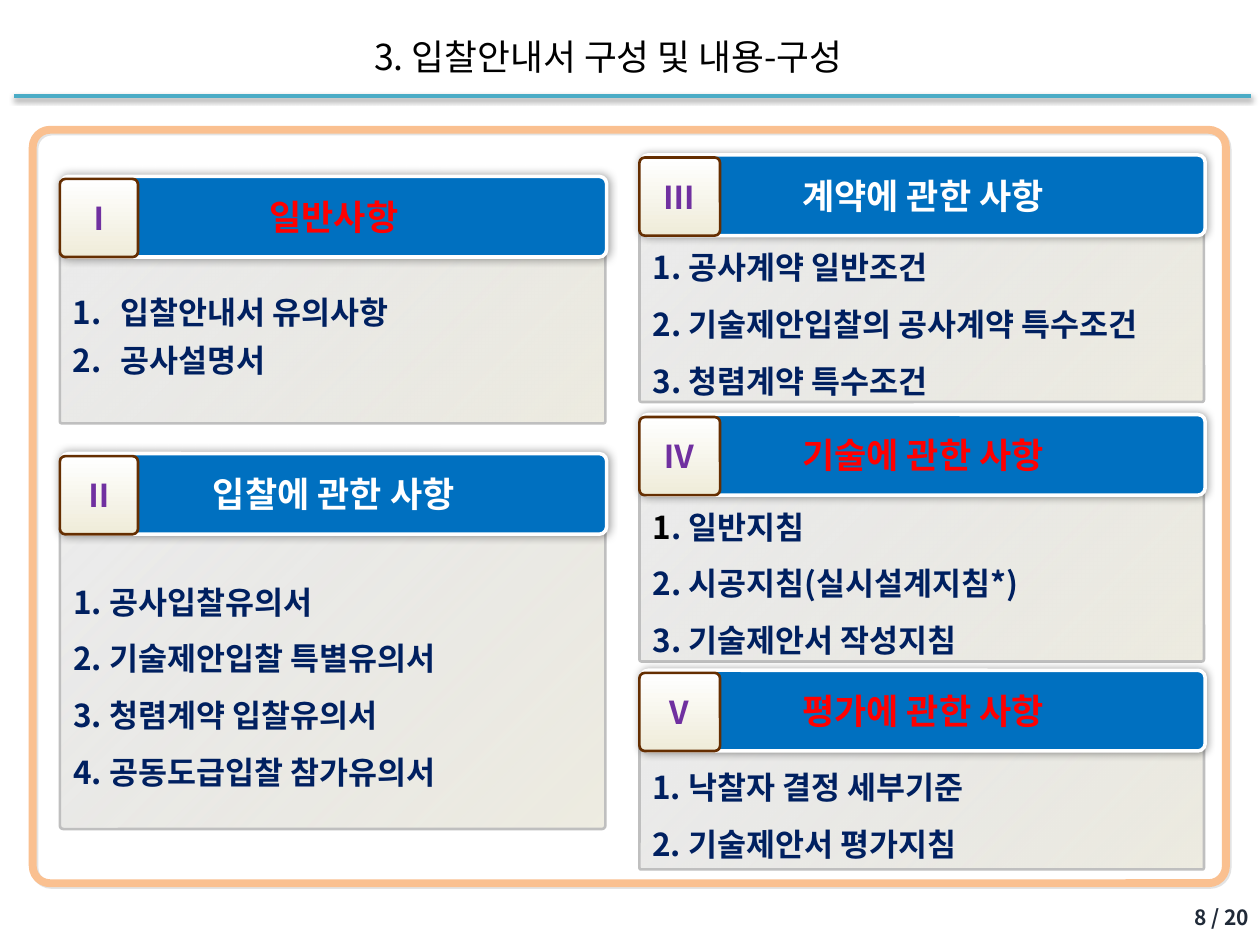
from dataclasses import dataclass

from lxml.etree import SubElement
from pptx import Presentation
from pptx.dml.color import RGBColor
from pptx.enum.shapes import MSO_CONNECTOR as Connector, MSO_SHAPE as Shape
from pptx.enum.text import MSO_ANCHOR as Anchor, PP_ALIGN as Align
from pptx.oxml import parse_xml
from pptx.oxml.ns import nsdecls, qn
from pptx.util import Inches, Pt

COLUMNS, ROWS = 100, 75
DECK_WIDTH, DECK_HEIGHT = Inches(10), Inches(7.5)
KOREAN = "Noto Sans CJK KR"
NAVY, RED, WHITE, BLACK = "002060", "FF0000", "FFFFFF", "000000"
HEADER_ROWS, BADGE_ROWS, BADGE_DROP, BODY_DROP = 6.4, 6.2, 0.2, 5.7
BODY_STOPS = (("EEECE1", 0, 100), ("D9D9D9", 100, 50), ("F2F2F2", 100, 100))
BODY_PATH = '<a:path path="circle"><a:fillToRect l="100000" t="100000"/></a:path>'
BADGE_STOPS = ((WHITE, 0, 100), ("EFECD9", 100, 100))
BADGE_PATH = '<a:lin ang="5400000" scaled="0"/>'


@dataclass(frozen=True)
class Area:
    """A rectangle in grid columns and rows."""
    left: float
    top: float
    width: float
    height: float

    def lengths(self) -> tuple:
        """Return left, top, width and height as slide lengths."""
        return across(self.left), down(self.top), across(self.width), down(self.height)


@dataclass(frozen=True)
class Stack:
    """A column of panels."""
    left: float
    width: float
    badge_width: float


@dataclass(frozen=True)
class Panel:
    """A numbered heading over a list."""
    stack: Stack
    top: float
    body_rows: float
    numeral: str
    heading: str
    heading_color: str
    items: tuple
    first_digit_color: str = NAVY
    automatic_numbers: bool = False


LEFT = Stack(4.75, 43.3, 6.2)
RIGHT = Stack(50.75, 44.8, 6.4)
PANELS = (
    Panel(LEFT, 14, 13.9, "Ⅰ", "일반사항", RED,
          ("입찰안내서 유의사항", "공사설명서"), automatic_numbers=True),
    Panel(LEFT, 36, 24.1, "Ⅱ", "입찰에 관한 사항", WHITE,
          ("1. 공사입찰유의서", "2. 기술제안입찰 특별유의서",
           "3. 청렴계약 입찰유의서", "4. 공동도급입찰 참가유의서")),
    Panel(RIGHT, 12.3, 13.9, "Ⅲ", "계약에 관한 사항", WHITE,
          ("1. 공사계약 일반조건", "2. 기술제안입찰의 공사계약 특수조건",
           "3. 청렴계약 특수조건")),
    Panel(RIGHT, 32.9, 13.9, "Ⅳ", "기술에 관한 사항", RED,
          ("1. 일반지침", "2. 시공지침(실시설계지침*)", "3. 기술제안서 작성지침"),
          first_digit_color=BLACK),
    Panel(RIGHT, 53.2, 10.1, "Ⅴ", "평가에 관한 사항", RED,
          ("1. 낙찰자 결정 세부기준", "2. 기술제안서 평가지침")),
)


def across(columns: float) -> int:
    """Convert grid columns to a length."""
    return round(DECK_WIDTH * columns / COLUMNS)


def down(rows: float) -> int:
    """Convert grid rows to a length."""
    return round(DECK_HEIGHT * rows / ROWS)


def paint(target, color: str) -> None:
    """Give a fill or a line one solid colour."""
    target.solid()
    target.fore_color.rgb = RGBColor.from_string(color)


def shade(shape, stops: tuple, direction: str) -> None:
    """Fill a shape with a gradient."""
    marks = "".join(
        f'<a:gs pos="{place * 1000}"><a:srgbClr val="{color}">'
        f'<a:alpha val="{alpha * 1000}"/></a:srgbClr></a:gs>'
        for color, place, alpha in stops)
    shape.fill.background()
    blank = shape._element.spPr.find(qn("a:noFill"))
    blank.getparent().replace(blank, parse_xml(
        f'<a:gradFill {nsdecls("a")} rotWithShape="1">'
        f'<a:gsLst>{marks}</a:gsLst>{direction}</a:gradFill>'))


def cast_shadow(shape, color: str, alpha: int, blur: float, distance: float, angle: int) -> None:
    """Add an outer shadow to a shape or connector."""
    effects = SubElement(shape._element.spPr, qn("a:effectLst"))
    shadow = SubElement(effects, qn("a:outerShdw"), blurRad=str(Pt(blur)),
                        dist=str(Pt(distance)), dir=str(angle * 60000),
                        algn="ctr", rotWithShape="0")
    tint = SubElement(shadow, qn("a:srgbClr"), val=color)
    SubElement(tint, qn("a:alpha"), val=str(alpha * 1000))


def number(para) -> None:
    """Number a paragraph automatically with a hanging indent."""
    settings = para._p.get_or_add_pPr()
    settings.set("marL", str(Inches(0.38)))
    settings.set("indent", str(-Inches(0.38)))
    SubElement(settings, qn("a:buFont"), typeface=KOREAN)
    SubElement(settings, qn("a:buAutoNum"), type="arabicPeriod")


def write(para, text: str, *, size: float, color: str, bold: bool = True,
          font: str = KOREAN) -> None:
    """Add a formatted span to a paragraph."""
    span = para.add_run()
    span.text = text
    span.font.size, span.font.bold, span.font.name = Pt(size), bold, font
    paint(span.font.fill, color)
    SubElement(span._r.get_or_add_rPr(), qn("a:ea"), typeface=KOREAN)


def add_label(page, area: Area, text: str, *, align: Align, **style) -> None:
    """Add one line of free text."""
    frame = page.shapes.add_textbox(*area.lengths()).text_frame
    frame.word_wrap, frame.vertical_anchor = True, Anchor.MIDDLE
    frame.paragraphs[0].alignment = align
    write(frame.paragraphs[0], text, **style)


def add_box(page, area: Area, rounding: float, line_color: str, line_width: float):
    """Add an outlined rounded rectangle without fill or shadow."""
    box = page.shapes.add_shape(Shape.ROUNDED_RECTANGLE, *area.lengths())
    box.adjustments[0] = rounding
    box.fill.background()
    paint(box.line.fill, line_color)
    box.line.width = Pt(line_width)
    box.text_frame.word_wrap = True
    box.text_frame.vertical_anchor = Anchor.MIDDLE
    return box


def add_body(page, panel: Panel) -> None:
    """Draw the list below a heading."""
    area = Area(panel.stack.left, panel.top + BODY_DROP, panel.stack.width, panel.body_rows)
    box = add_box(page, area, 0.012, "BFBFBF", 1.5)
    shade(box, BODY_STOPS, BODY_PATH)
    box.shadow.inherit = False
    frame = box.text_frame
    for index, item in enumerate(panel.items):
        para = frame.add_paragraph() if index else frame.paragraphs[0]
        para.alignment = Align.LEFT
        if panel.automatic_numbers:
            number(para)
            para.space_before = Pt(6 if index else 0)
            write(para, item, size=18, color=NAVY, font="Arial")
            continue
        para.line_spacing = 1.5
        if index == 0 and panel.first_digit_color != NAVY:
            write(para, item[0], size=18, color=panel.first_digit_color)
            item = item[1:]
        write(para, item, size=18, color=NAVY)


def add_panel(page, panel: Panel) -> None:
    """Draw a list, its heading and its numeral badge."""
    stack = panel.stack
    add_body(page, panel)
    header = add_box(page, Area(stack.left + 0.1, panel.top, stack.width, HEADER_ROWS),
                     0.091, WHITE, 2)
    paint(header.fill, "0070C0")
    cast_shadow(header, BLACK, 40, 5, 0, 0)
    badge = add_box(page, Area(stack.left, panel.top + BADGE_DROP,
                               stack.badge_width, BADGE_ROWS), 0.068, "652E01", 1.5)
    shade(badge, BADGE_STOPS, BADGE_PATH)
    badge.shadow.inherit = False
    badge.text_frame.word_wrap = False
    for box, text, size, color in ((header, panel.heading, 20, panel.heading_color),
                                   (badge, panel.numeral, 18, "7030A0")):
        para = box.text_frame.paragraphs[0]
        para.alignment = Align.CENTER
        write(para, text, size=size, color=color)


def main() -> None:
    """Build the slide and save it."""
    deck = Presentation()
    deck.slide_width, deck.slide_height = DECK_WIDTH, DECK_HEIGHT
    page = deck.slides.add_slide(deck.slide_layouts[6])
    rule = page.shapes.add_connector(Connector.STRAIGHT, across(1.1), down(7.6),
                                     across(99.3), down(7.6))
    paint(rule.line.fill, "4BACC6")
    rule.line.width = Pt(2)
    cast_shadow(rule, BLACK, 38, 3.1, 1.6, 90)
    add_label(page, Area(91, 71.4, 9.1, 2.7), "8 / 20", align=Align.RIGHT,
              size=12, color="202A38")
    add_label(page, Area(28.7, 2.1, 42.5, 4.7), "3. 입찰안내서 구성 및 내용-구성",
              align=Align.LEFT, size=20.4, color=BLACK, bold=False)
    border = add_box(page, Area(2.6, 10.3, 94.7, 59.8), 0.023, "FAC090", 4.5)
    cast_shadow(border, "DDDDDD", 80, 0, 1.4, 45)
    for panel in PANELS:
        add_panel(page, panel)
    deck.save("out.pptx")


if __name__ == "__main__":
    main()
